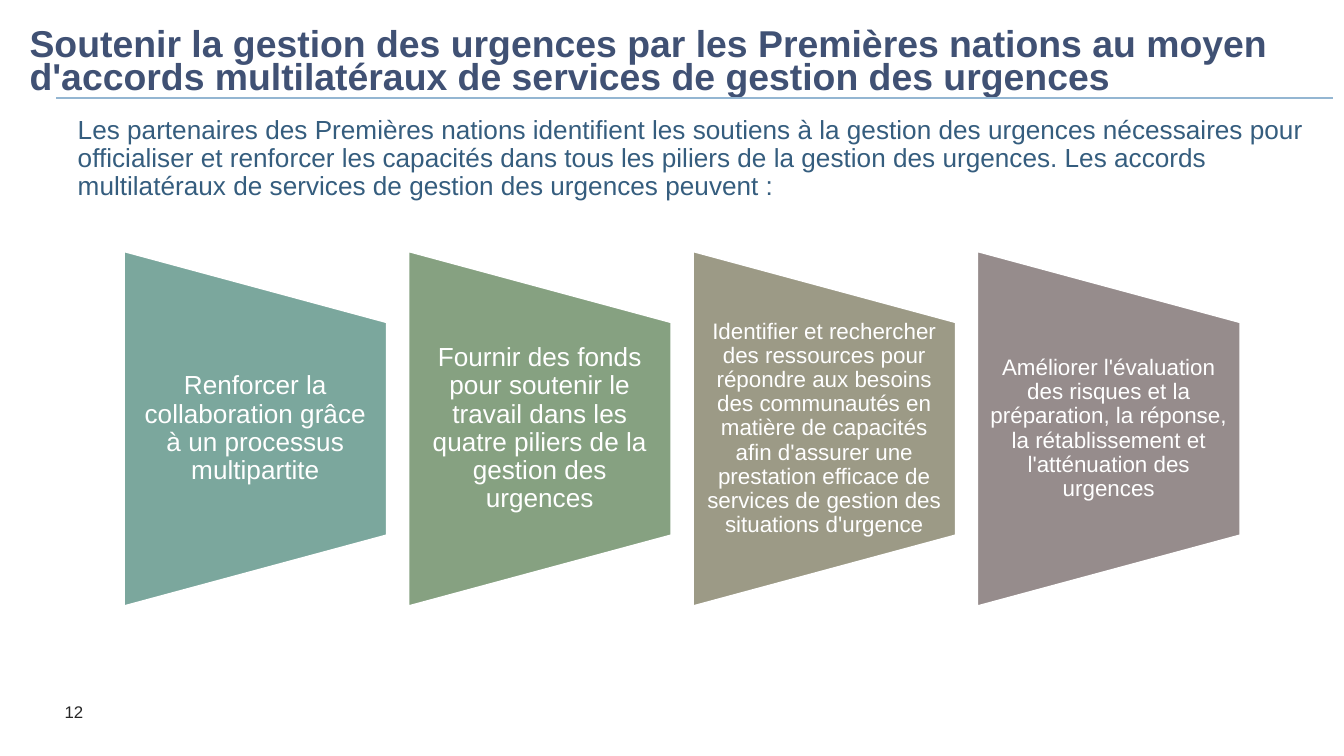
from lxml import etree
from pptx import Presentation
from pptx.dml.color import RGBColor
from pptx.enum.shapes import MSO_CONNECTOR, MSO_SHAPE
from pptx.enum.text import MSO_ANCHOR, MSO_AUTO_SIZE, PP_ALIGN
from pptx.oxml.ns import qn
from pptx.util import Inches, Pt

LEFT, CENTER = PP_ALIGN.LEFT, PP_ALIGN.CENTER
TOP, MIDDLE = MSO_ANCHOR.TOP, MSO_ANCHOR.MIDDLE
NO_AUTOFIT = MSO_AUTO_SIZE.NONE
TRAPEZOID = MSO_SHAPE.FLOWCHART_MANUAL_OPERATION
STRAIGHT = MSO_CONNECTOR.STRAIGHT

WHITE = RGBColor(0xFF, 0xFF, 0xFF)
NAVY = RGBColor(0x40, 0x51, 0x74)
BLUE = RGBColor(0x35, 0x5D, 0x7E)
RULE_BLUE = RGBColor(0x94, 0xB6, 0xD2)
DARK_GRAY = RGBColor(0x26, 0x26, 0x26)
TEAL = RGBColor(0x7B, 0xA7, 0x9D)
GREEN = RGBColor(0x86, 0xA1, 0x81)
KHAKI = RGBColor(0x9C, 0x9A, 0x86)
MAUVE = RGBColor(0x96, 0x8C, 0x8C)


def write_text(shape, text, size, color, bold=False, align=LEFT, anchor=TOP,
               line_spacing=0.9, space_after=0, side=0.1, edge=0.05):
    frame = shape.text_frame
    frame.word_wrap = True
    frame.auto_size = NO_AUTOFIT
    frame.vertical_anchor = anchor
    frame.margin_left = frame.margin_right = Inches(side)
    frame.margin_top = frame.margin_bottom = Inches(edge)
    paragraph = frame.paragraphs[0]
    paragraph.alignment = align
    paragraph.line_spacing = line_spacing
    paragraph.space_after = Pt(space_after)
    run = paragraph.add_run()
    run.text = text
    run.font.name = "Arial"
    run.font.size = Pt(size)
    run.font.bold = bold
    run.font.color.rgb = color


presentation = Presentation()
presentation.slide_width = Inches(10)
presentation.slide_height = Inches(10 * 9 / 16)
slide = presentation.slides.add_slide(presentation.slide_layouts[5])
shapes = slide.shapes

number = shapes.add_textbox(Inches(0.08), Inches(5.19), Inches(0.94), Inches(0.24))
write_text(number, "12", 9, DARK_GRAY, align=CENTER, space_after=3.3)

rule = shapes.add_connector(STRAIGHT, Inches(0.42), Inches(0.73), Inches(9.92), Inches(0.73))
rule.line.color.rgb = RULE_BLUE
rule.line.width = Pt(1.5)
etree.SubElement(rule._element.spPr, qn("a:effectLst"))

title = shapes.title
title.left, title.top = Inches(0.22), Inches(0.23)
title.width, title.height = Inches(9.84), Inches(0.29)
write_text(
    title,
    "Soutenir la gestion des urgences par les Premières nations au moyen "
    "d'accords multilatéraux de services de gestion des urgences",
    20, NAVY, bold=True, line_spacing=Pt(18), side=0, edge=0,
)

CARDS = [
    ("Renforcer la collaboration grâce à un processus multipartite", 14, 0.1, TEAL),
    ("Fournir des fonds pour soutenir le travail dans les quatre piliers de la "
     "gestion des urgences", 14, 0.1, GREEN),
    ("Identifier et rechercher des ressources pour répondre aux besoins des "
     "communautés en matière de capacités afin d'assurer une prestation efficace "
     "de services de gestion des situations d'urgence", 12, 0.08, KHAKI),
    ("Améliorer l'évaluation des risques et la préparation, la réponse, la "
     "rétablissement et l'atténuation des urgences", 12, 0.08, MAUVE),
]
CARD_LENGTH, CARD_WIDTH, LABEL_HEIGHT = 2.66, 1.97, 1.6
FIRST_CENTER, CENTER_STEP, MIDDLE_Y = 1.9, 6.35 / 3, 3.19

for index, (text, size, side, color) in enumerate(CARDS):
    center = FIRST_CENTER + index * CENTER_STEP
    card = shapes.add_shape(
        TRAPEZOID,
        Inches(center - CARD_LENGTH / 2), Inches(MIDDLE_Y - CARD_WIDTH / 2),
        Inches(CARD_LENGTH), Inches(CARD_WIDTH),
    )
    card.rotation = 270
    card.shadow.inherit = False
    card.fill.solid()
    card.fill.fore_color.rgb = color
    card.line.color.rgb = WHITE
    card.line.width = Pt(2)
    label = shapes.add_textbox(
        Inches(center - CARD_WIDTH / 2), Inches(MIDDLE_Y - LABEL_HEIGHT / 2),
        Inches(CARD_WIDTH), Inches(LABEL_HEIGHT),
    )
    write_text(label, text, size, WHITE, align=CENTER, anchor=MIDDLE,
               space_after=0.35 * size, side=side, edge=0)

introduction = shapes.add_textbox(Inches(0.48), Inches(0.82), Inches(9.52), Inches(0.74))
write_text(
    introduction,
    "Les partenaires des Premières nations identifient les soutiens à la gestion des "
    "urgences nécessaires pour officialiser et renforcer les capacités dans tous les "
    "piliers de la gestion des urgences. Les accords multilatéraux de services de "
    "gestion des urgences peuvent :",
    14, BLUE, space_after=5.2,
)

presentation.save("out.pptx")
